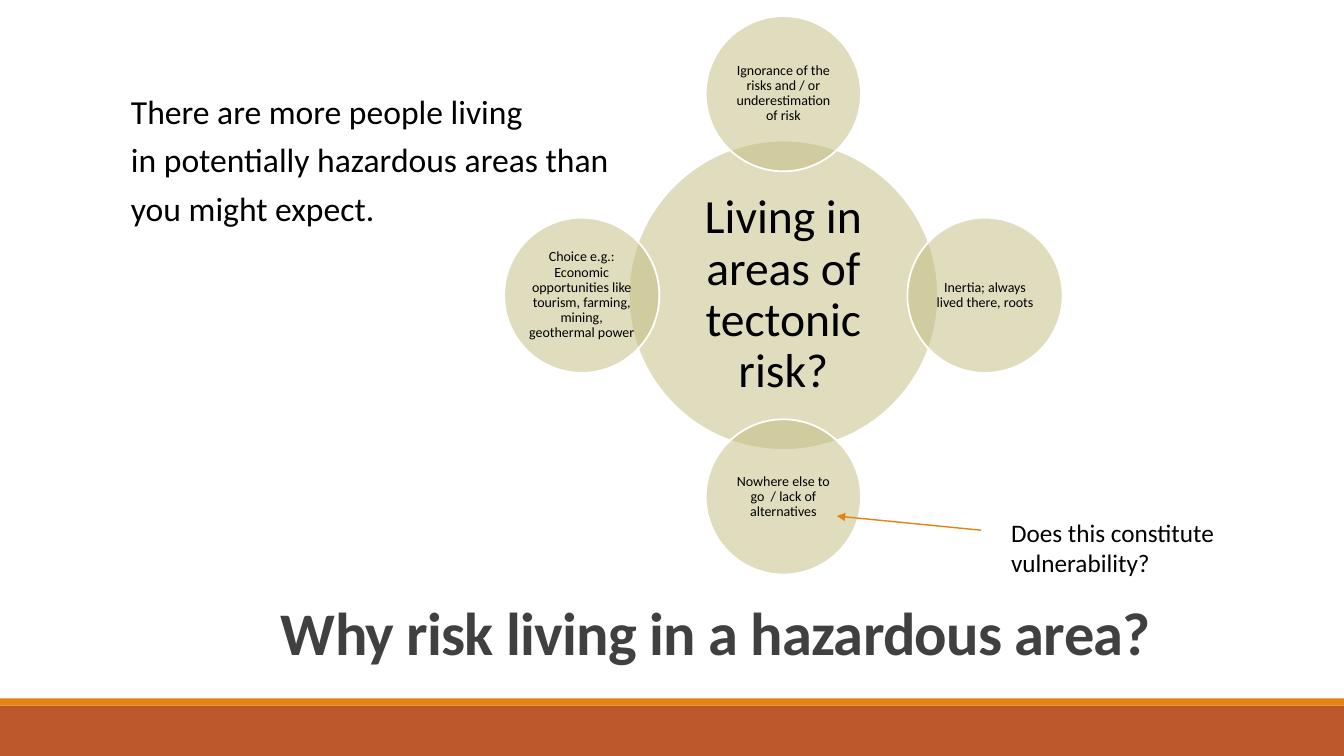
from dataclasses import dataclass

from lxml.etree import SubElement
from pptx import Presentation
from pptx.dml.color import RGBColor
from pptx.enum.shapes import MSO_CONNECTOR as Connector, MSO_SHAPE as Shape
from pptx.enum.text import MSO_ANCHOR as Anchor, MSO_AUTO_SIZE as AutoSize, PP_ALIGN as Align
from pptx.oxml.ns import qn
from pptx.util import Inches, Pt

FONT = "Calibri"
COLORS = {
    "rust": "BD582C",
    "orange": "E48312",
    "khaki": "C2BC80",
    "white": "FFFFFF",
    "title": "404040",
    "text": "000000",
}
HUB_X, HUB_Y = 7.77, 2.93
ORBIT = 2.0


@dataclass
class Bar:
    top: float
    height: float
    color: str


@dataclass
class Circle:
    text: str
    diameter: float
    size: float
    inset: float
    step_x: int = 0
    step_y: int = 0


@dataclass
class Note:
    lines: list[str]
    left: float
    top: float
    width: float
    height: float
    size: float
    space_after: float = 0


BARS = [Bar(7, 0.5, "rust"), Bar(6.93, 0.07, "orange")]


def reason(text: str, step_x: int, step_y: int) -> Circle:
    return Circle(text, 1.54, 10, 0.01, step_x, step_y)


CIRCLES = [
    Circle("Living in areas of tectonic risk?", 3.07, 34, 0.05),
    reason("Ignorance of the risks and / or underestimation of risk", 0, -1),
    reason("Inertia; always lived there, roots", 1, 0),
    reason("Nowhere else to go  / lack of alternatives", 0, 1),
    reason("Choice e.g.: Economic opportunities like tourism, farming, mining, "
           "geothermal power", -1, 0),
]
NOTES = [
    Note(["There are more people living", "in potentially hazardous areas than",
          "you might expect."], 1.2, 0.85, 8.19, 3.2, 24, 6),
    Note(["Does this constitute vulnerability?"], 9.93, 5.08, 2.31, 0.71, 18),
]


def rgb(name: str) -> RGBColor:
    return RGBColor.from_string(COLORS[name])


def add_run(paragraph, text: str, size: float, color: str = "text"):
    run = paragraph.add_run()
    run.text = text
    run.font.name = FONT
    run.font.size = Pt(size)
    run.font.color.rgb = rgb(color)
    return run


def add_bar(slide, bar: Bar) -> None:
    shape = slide.shapes.add_shape(
        Shape.RECTANGLE, 0, Inches(bar.top), Inches(13.33), Inches(bar.height))
    shape.shadow.inherit = False
    shape.fill.solid()
    shape.fill.fore_color.rgb = rgb(bar.color)
    shape.line.fill.background()


def add_circle(slide, circle: Circle) -> None:
    left = HUB_X + circle.step_x * ORBIT - circle.diameter / 2
    top = HUB_Y + circle.step_y * ORBIT - circle.diameter / 2
    side = Inches(circle.diameter)
    shape = slide.shapes.add_shape(Shape.OVAL, Inches(left), Inches(top), side, side)
    shape.shadow.inherit = False
    shape.fill.solid()
    shape.fill.fore_color.rgb = rgb("khaki")
    # Half-transparent fill
    color = shape.fill._xPr.find(qn("a:solidFill")).find(qn("a:srgbClr"))
    SubElement(color, qn("a:alpha")).set("val", "50000")
    shape.line.color.rgb = rgb("white")
    shape.line.width = Pt(1.25)

    frame = shape.text_frame
    frame.word_wrap = True
    frame.vertical_anchor = Anchor.MIDDLE
    frame.margin_left = frame.margin_right = Inches(circle.inset)
    frame.margin_top = frame.margin_bottom = Inches(circle.inset)
    paragraph = frame.paragraphs[0]
    paragraph.alignment = Align.CENTER
    paragraph.line_spacing = 0.9
    add_run(paragraph, circle.text, circle.size)


def add_note(slide, note: Note) -> None:
    box = slide.shapes.add_textbox(
        Inches(note.left), Inches(note.top), Inches(note.width), Inches(note.height))
    frame = box.text_frame
    frame.word_wrap = True
    for index, line in enumerate(note.lines):
        paragraph = frame.add_paragraph() if index else frame.paragraphs[0]
        paragraph.space_after = Pt(note.space_after)
        add_run(paragraph, line, note.size)


def add_arrow(slide) -> None:
    arrow = slide.shapes.add_connector(
        Connector.STRAIGHT, Inches(9.73), Inches(5.26), Inches(8.3), Inches(5.12))
    arrow.line.color.rgb = rgb("orange")
    arrow.line.width = Pt(1)
    SubElement(arrow.line._get_or_add_ln(), qn("a:tailEnd")).set("type", "triangle")
    SubElement(arrow._element.spPr, qn("a:effectLst"))


def set_title(slide, text: str) -> None:
    title = slide.shapes.title
    title.left, title.top = Inches(1.6), Inches(5.94)
    title.width, title.height = Inches(11), Inches(0.76)
    frame = title.text_frame
    frame.auto_size = AutoSize.NONE
    frame.vertical_anchor = Anchor.MIDDLE
    paragraph = frame.paragraphs[0]
    paragraph.alignment = Align.CENTER
    paragraph.line_spacing = 0.85
    run = add_run(paragraph, text, 43.2, "title")
    run.font.bold = True
    run.font._element.set("spc", "-50")


def main() -> None:
    presentation = Presentation()
    presentation.slide_width = Inches(13.33)
    presentation.slide_height = Inches(7.5)
    slide = presentation.slides.add_slide(presentation.slide_layouts[5])

    # Footer bars and title
    for bar in BARS:
        add_bar(slide, bar)
    set_title(slide, "Why risk living in a hazardous area?")

    # Hub with its four reasons
    for circle in CIRCLES:
        add_circle(slide, circle)

    # Side remarks and the arrow
    for note in NOTES:
        add_note(slide, note)
    add_arrow(slide)

    presentation.save("out.pptx")


if __name__ == "__main__":
    main()
